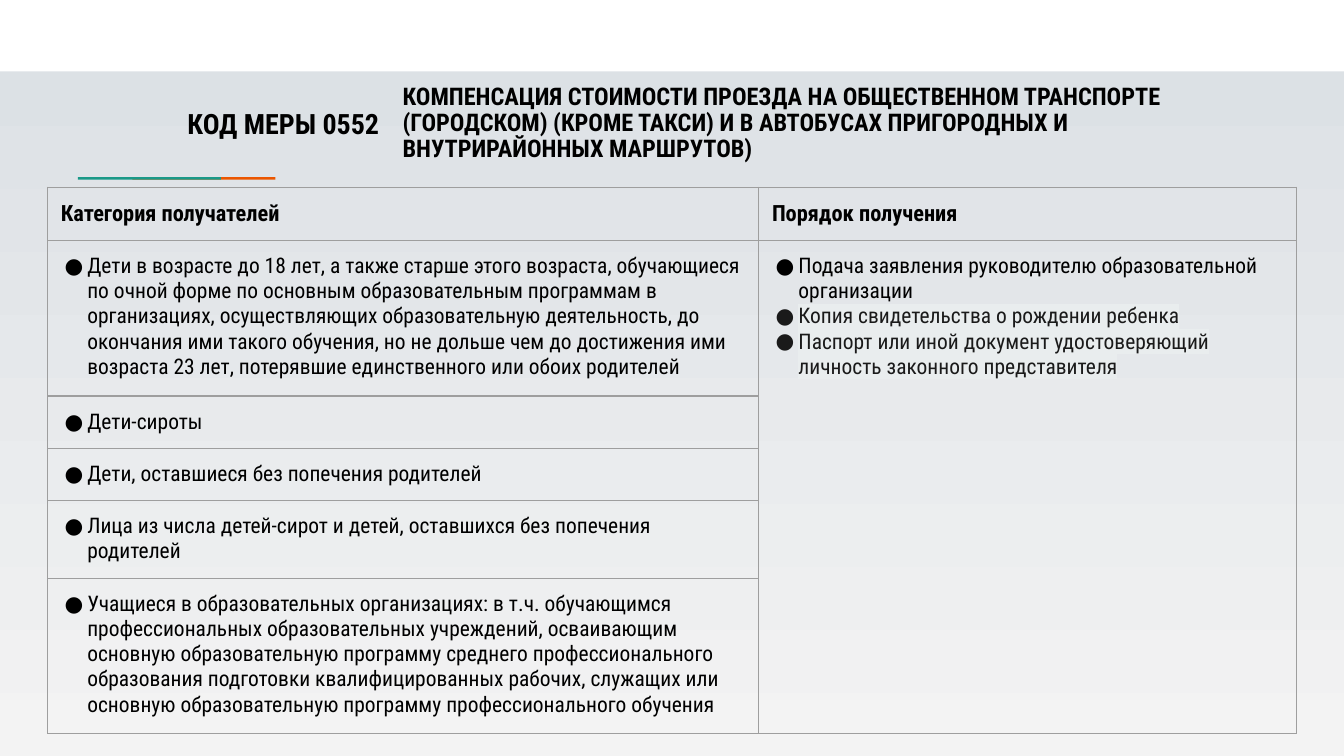
from dataclasses import dataclass

from lxml import etree
from pptx import Presentation
from pptx.dml.color import RGBColor
from pptx.enum import shapes, text
from pptx.oxml import ns
from pptx.util import Cm, Pt


@dataclass(frozen=True)
class Theme:
    font: str = "Roboto Condensed"
    ink: str = "000000"
    soft_ink: str = "1A1A1A"
    highlight: str = "E9EDEE"
    bg_top: str = "DADFE4"
    bg_bottom: str = "F3F3F3"
    band: str = "FFFFFF"
    teal: str = "1A9988"
    orange: str = "EB5600"
    border: str = "9E9E9E"
    border_width: float = 0.75
    title_size: float = 13
    code_size: float = 15
    head_size: float = 12
    body_size: float = 11.5


T = Theme()
INSET = 0.25

TITLE = ("КОМПЕНСАЦИЯ СТОИМОСТИ ПРОЕЗДА НА ОБЩЕСТВЕННОМ ТРАНСПОРТЕ (ГОРОДСКОМ) "
         "(КРОМЕ ТАКСИ) И В АВТОБУСАХ ПРИГОРОДНЫХ И ВНУТРИРАЙОННЫХ МАРШРУТОВ)")
CODE = "КОД МЕРЫ 0552"
HEADINGS = ["Категория получателей", "Порядок получения"]
RECIPIENTS = [
    "Дети в возрасте до 18 лет, а также старше этого возраста, обучающиеся по очной "
    "форме по основным образовательным программам в организациях, осуществляющих "
    "образовательную деятельность, до окончания ими такого обучения, но не дольше чем "
    "до достижения ими возраста 23 лет, потерявшие единственного или обоих родителей",
    "Дети-сироты",
    "Дети, оставшиеся без попечения родителей",
    "Лица из числа детей-сирот и детей, оставшихся без попечения родителей",
    "Учащиеся в образовательных организациях: в т.ч. обучающимся профессиональных "
    "образовательных учреждений, осваивающим основную образовательную программу "
    "среднего профессионального образования подготовки квалифицированных рабочих, "
    "служащих или основную образовательную программу профессионального обучения",
]
PROCEDURE = [
    "Подача заявления руководителю образовательной организации",
    "Копия свидетельства о рождении ребенка",
    "Паспорт или иной документ удостоверяющий личность законного представителя",
]
COL_WIDTHS = [13.44, 10.16]
ROW_HEIGHTS = [1, 2.87, 0.98, 0.98, 1.45, 2.87]


def add_xml(parent, tag, **attrs):
    return etree.SubElement(parent, ns.qn(tag), attrs)


def format_runs(p, size, bold=False, color=T.ink):
    for r in p.runs:
        r.font.name = T.font
        r.font.size = Pt(size)
        r.font.bold = bold
        r.font.color.rgb = RGBColor.from_string(color)


def set_insets(obj, x, y):
    obj.margin_left = obj.margin_right = Cm(x)
    obj.margin_top = obj.margin_bottom = Cm(y)


def add_bar(parent, box, color):
    sp = parent.shapes.add_shape(shapes.MSO_SHAPE.RECTANGLE, *map(Cm, box))
    sp.shadow.inherit = False
    sp.fill.solid()
    sp.fill.fore_color.rgb = RGBColor.from_string(color)
    sp.line.fill.background()
    return sp


def add_bullets(p, color):
    pPr = p._p.get_or_add_pPr()
    pPr.set("marL", str(Cm(0.5)))
    pPr.set("indent", str(-Cm(0.43)))
    add_xml(add_xml(pPr, "a:buClr"), "a:srgbClr", val=color)
    add_xml(pPr, "a:buFont", typeface=T.font)
    add_xml(pPr, "a:buChar", char="●")


def add_highlight(r):
    mark = etree.Element(ns.qn("a:highlight"))
    add_xml(mark, "a:srgbClr", val=T.highlight)
    r._r.rPr.find(ns.qn("a:solidFill")).addnext(mark)


def add_borders(cell, sides):
    tcPr = cell._tc.get_or_add_tcPr()
    for i, side in enumerate(sides):
        ln = etree.Element(ns.qn(f"a:ln{side}"), w=str(Pt(T.border_width)))
        add_xml(add_xml(ln, "a:solidFill"), "a:srgbClr", val=T.border)
        tcPr.insert(i, ln)


def draw_background(slide, box):
    x, y, w, h = box
    fill = slide.background.fill
    fill.gradient()
    fill.gradient_angle = 270
    for stop, position, color in zip(fill.gradient_stops, (0, 1), (T.bg_top, T.bg_bottom)):
        stop.position = position
        stop.color.rgb = RGBColor.from_string(color)
    # White band along the top edge
    add_bar(slide, (x, y, w, 1.35), T.band)


def draw_header(slide, box):
    x, y, w, h = box
    code_w = 5.35

    # Title
    sp = slide.shapes.title
    sp.left, sp.top, sp.width, sp.height = map(Cm, (x + code_w, y, w - code_w, h))
    tf = sp.text_frame
    tf.text = TITLE
    tf.auto_size = text.MSO_AUTO_SIZE.NONE
    tf.vertical_anchor = text.MSO_ANCHOR.MIDDLE
    set_insets(tf, 0.19, 0.1)
    p = tf.paragraphs[0]
    p.alignment = text.PP_ALIGN.LEFT
    p.line_spacing = 0.9
    format_runs(p, T.title_size, bold=True)

    # Measure code
    tf = slide.shapes.add_textbox(*map(Cm, (x, y, code_w, h))).text_frame
    tf.text = CODE
    tf.word_wrap = True
    tf.vertical_anchor = text.MSO_ANCHOR.MIDDLE
    set_insets(tf, INSET, INSET)
    p = tf.paragraphs[0]
    p.alignment = text.PP_ALIGN.RIGHT
    format_runs(p, T.code_size, bold=True)


def draw_accent(slide, box):
    x, y, w, h = box
    bar_w, bar_length = 0.13, 2.7
    group = slide.shapes.add_group_shape()
    # Upright bars turned on their side; teal overlaps orange
    for left, color in ((x + w - bar_w, T.orange), (x, T.teal)):
        add_bar(group, (left, y, bar_w, bar_length), color).rotation = 270
    # Flattening the group thins the turned bars
    group.height = Cm(h)


def fill_list(cell, items):
    cell.text_frame.text = "\n".join(items)
    for i, p in enumerate(cell.text_frame.paragraphs):
        color = T.soft_ink if i else T.ink
        add_bullets(p, color)
        format_runs(p, T.body_size, color=color)
        if i:
            add_highlight(p.runs[0])


def draw_table(slide, box):
    n_rows, n_cols = len(ROW_HEIGHTS), len(COL_WIDTHS)
    table = slide.shapes.add_table(n_rows, n_cols, *map(Cm, box)).table
    table.first_row = table.horz_banding = False
    for col, width in zip(table.columns, COL_WIDTHS):
        col.width = Cm(width)
    for row, height in zip(table.rows, ROW_HEIGHTS):
        row.height = Cm(height)
    table.cell(1, 1).merge(table.cell(n_rows - 1, 1))

    # Headings and lists
    for c, heading in enumerate(HEADINGS):
        tf = table.cell(0, c).text_frame
        tf.text = heading
        format_runs(tf.paragraphs[0], T.head_size, bold=True)
    for i, recipient in enumerate(RECIPIENTS, 1):
        fill_list(table.cell(i, 0), [recipient])
    fill_list(table.cell(1, 1), PROCEDURE)

    # Fills, insets and borders; no lines inside the merged cell
    for i in range(n_rows):
        for c in range(n_cols):
            cell = table.cell(i, c)
            cell.fill.background()
            set_insets(cell, INSET, INSET)
            sides = "LR" if cell.is_spanned else "LRT"
            inside = cell.is_spanned and i < n_rows - 1
            add_borders(cell, sides if inside else sides + "B")


def main():
    prs = Presentation()
    prs.slide_width, prs.slide_height = Cm(25.4), Cm(14.29)
    slide = prs.slides.add_slide(prs.slide_layouts[0])
    subtitle = slide.placeholders[1].element
    subtitle.getparent().remove(subtitle)

    draw_background(slide, (0, 0, 25.4, 14.29))
    draw_header(slide, (2.07, 1.36, 21.35, 1.95))
    draw_accent(slide, (2.76, 2.85, 1.16, 1.04))
    draw_table(slide, (0.9, 3.54, sum(COL_WIDTHS), sum(ROW_HEIGHTS)))
    prs.save("out.pptx")


if __name__ == "__main__":
    main()
